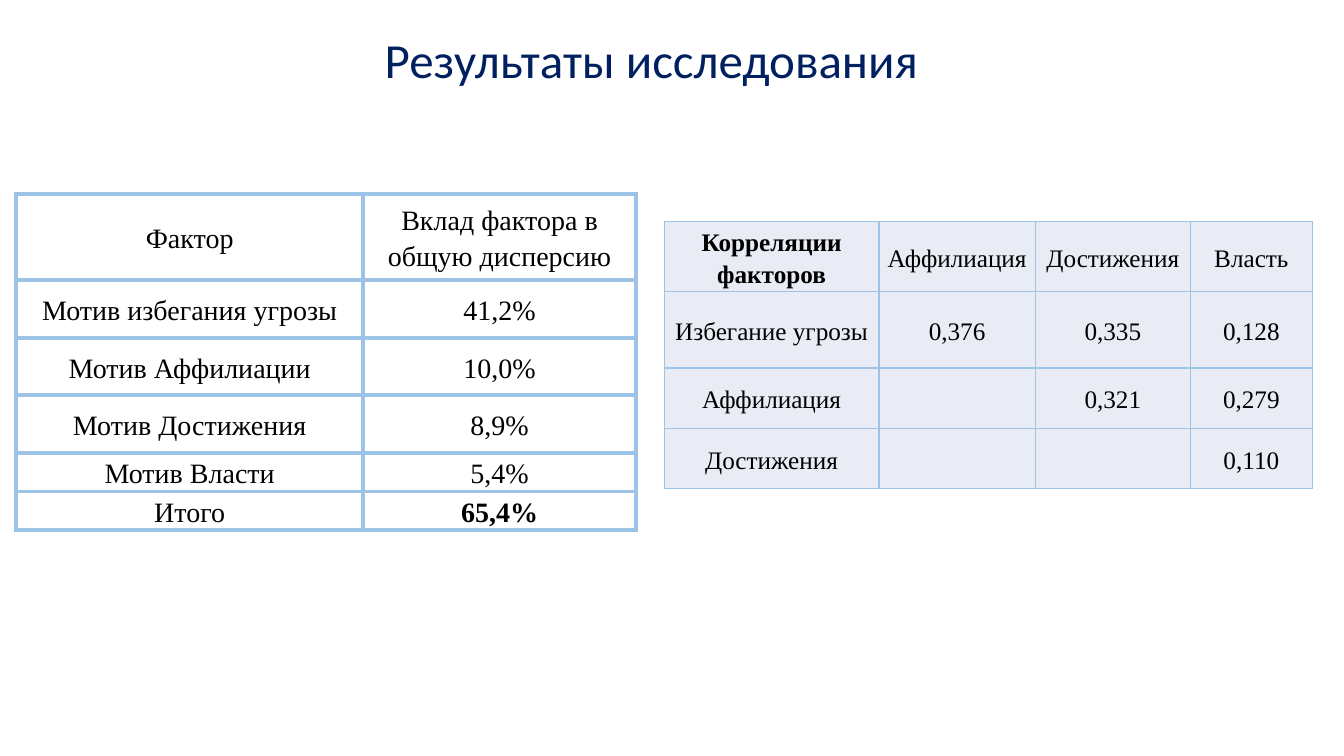
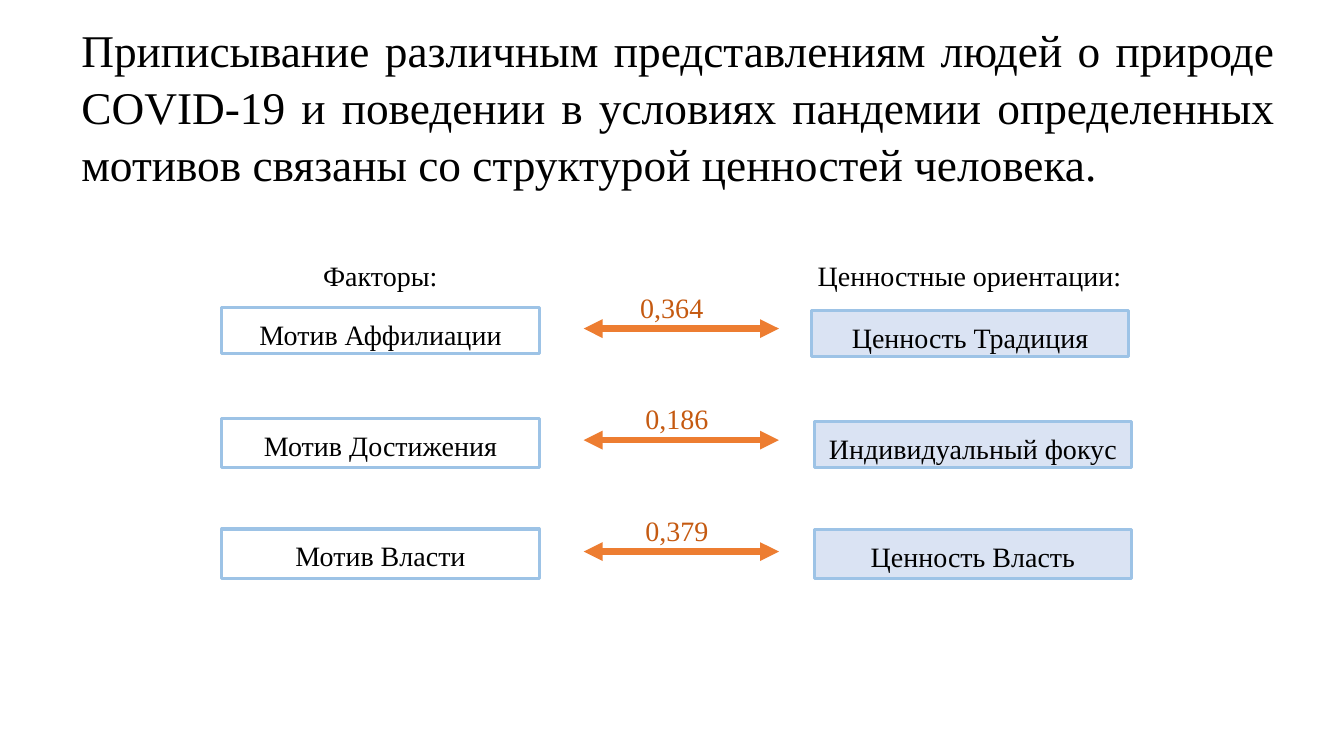
from lxml import etree
from pptx import Presentation
from pptx import util as u
from pptx.dml.color import RGBColor
from pptx.enum import shapes, text
from pptx.oxml import ns

SERIF, SANS = "Times New Roman", "Calibri"
BLACK, NAVY, RUST = "000000", "002060", "C55A11"
BORDER, ARROW = "9DC3E6", "ED7D31"
CELL_FILL, VALUE_FILL = "E9EBF5", "DAE3F3"


def rgb(value):
    return RGBColor.from_string(value)


class Deck:
    """Shared style plus the slide being built; lengths are centimetres."""

    def __init__(self):
        self.prs = Presentation()
        self.prs.slide_width, self.prs.slide_height = u.Cm(33.87), u.Cm(19.05)
        self.s = None

    def new_slide(self):
        self.s = self.prs.slides.add_slide(self.prs.slide_layouts[6])

    def add_text(self, tf, content, size=20, color=BLACK, font=SERIF, bold=False,
                 align=text.PP_ALIGN.CENTER, spacing=1.0, after=0):
        tf.word_wrap = True
        p = tf.paragraphs[0]
        p.alignment, p.line_spacing, p.space_after = align, spacing, u.Pt(after)
        r = p.add_run()
        r.text = content
        r.font.size, r.font.name, r.font.bold = u.Pt(size), font, bold
        r.font.color.rgb = rgb(color)

    def textbox(self, box, content, anchor=text.MSO_ANCHOR.TOP, **style):
        tf = self.s.shapes.add_textbox(*map(u.Cm, box)).text_frame
        tf.vertical_anchor = anchor
        self.add_text(tf, content, **style)

    def title(self, box, content, **style):
        self.textbox(box, content, text.MSO_ANCHOR.MIDDLE, **style)

    def box(self, box, content, fill=None, after=5):
        sp = self.s.shapes.add_shape(shapes.MSO_SHAPE.RECTANGLE, *map(u.Cm, box))
        sp.shadow.inherit = False
        self.paint(sp.fill, fill)
        sp.line.color.rgb, sp.line.width = rgb(BORDER), u.Pt(2.25)
        sp.text_frame.vertical_anchor = text.MSO_ANCHOR.TOP
        self.add_text(sp.text_frame, content, spacing=1.15, after=after)

    def double_arrow(self, left, right, y):
        arrow = self.s.shapes.add_connector(
            shapes.MSO_CONNECTOR.STRAIGHT, *map(u.Cm, (left, y, right, y)))
        arrow.line.color.rgb, arrow.line.width = rgb(ARROW), u.Pt(4.5)
        sp_pr = arrow._element.spPr
        ln = sp_pr.find(ns.qn("a:ln"))
        for end in ("a:headEnd", "a:tailEnd"):
            etree.SubElement(ln, ns.qn(end), type="triangle")
        etree.SubElement(sp_pr, ns.qn("a:effectLst"))

    def table(self, left, top, widths, heights, rows, border, fill=None,
              margin=0.13, bold_cells=(), **style):
        frame = self.s.shapes.add_table(
            len(rows), len(widths),
            *map(u.Cm, (left, top, sum(widths), sum(heights))))
        tbl = frame.table
        tbl.first_row = tbl.horz_banding = False
        for col, width in zip(tbl.columns, widths):
            col.width = u.Cm(width)
        for row, height in zip(tbl.rows, heights):
            row.height = u.Cm(height)
        for i, row in enumerate(rows):
            for j, content in enumerate(row):
                cell = tbl.cell(i, j)
                cell.margin_left = cell.margin_right = u.Cm(margin)
                cell.margin_top = cell.margin_bottom = 0
                cell.vertical_anchor = text.MSO_ANCHOR.MIDDLE
                self.cell_borders(cell, border)
                self.paint(cell.fill, fill)
                if content:
                    self.add_text(cell.text_frame, content, spacing=1.15,
                                  bold=(i, j) in bold_cells, **style)

    @staticmethod
    def paint(target, fill):
        if fill:
            target.solid()
            target.fore_color.rgb = rgb(fill)
        else:
            target.background()

    @staticmethod
    def cell_borders(cell, width):
        tc_pr = cell._tc.get_or_add_tcPr()
        for side in ("a:lnL", "a:lnR", "a:lnT", "a:lnB"):
            ln = etree.SubElement(tc_pr, ns.qn(side), w=str(int(u.Pt(width))))
            solid = etree.SubElement(ln, ns.qn("a:solidFill"))
            etree.SubElement(solid, ns.qn("a:srgbClr"), val=BORDER)


def results_slide(deck):
    deck.new_slide()
    deck.title((5.36, 0.2, 22.12, 2.77), "Результаты исследования",
               size=35, color=NAVY, font=SANS, spacing=0.9)

    # Share of variance by factor
    deck.table(0.41, 4.88, [8.74, 6.88], [2.18] + [1.45] * 3 + [0.97] * 2, [
        ("Фактор", "Вклад фактора в общую дисперсию"),
        ("Мотив избегания угрозы", "41,2%"),
        ("Мотив Аффилиации", "10,0%"),
        ("Мотив Достижения", "8,9%"),
        ("Мотив Власти", "5,4%"),
        ("Итого", "65,4%"),
    ], border=3, margin=0.15, bold_cells=[(5, 1)], after=5)

    # Correlations between factors
    deck.table(16.74, 5.59, [5.41, 3.94, 3.91, 3.07], [1.75, 1.93, 1.52, 1.52], [
        ("Корреляции факторов", "Аффилиация", "Достижения", "Власть"),
        ("Избегание угрозы", "0,376", "0,335", "0,128"),
        ("Аффилиация", "", "0,321", "0,279"),
        ("Достижения", "", "", "0,110"),
    ], border=1, fill=CELL_FILL, bold_cells=[(0, 0)], size=18, after=10)


def values_slide(deck):
    deck.new_slide()
    deck.title((1.8, 0.5, 30.58, 4.3),
               "Приписывание различным представлениям людей о природе COVID-19 "
               "и поведении в условиях пандемии определенных мотивов связаны "
               "со структурой ценностей человека.",
               size=32.4, align=text.PP_ALIGN.JUSTIFY, spacing=1.05)

    # Column headings
    deck.textbox((6.93, 6.38, 5.31, 1.12), "Факторы:")
    deck.textbox((19.43, 6.4, 10.01, 1.12), "Ценностные ориентации:")

    # Factor (name, height), correlation (r, left), value (name, left, top, height)
    links = [
        (("Мотив Аффилиации", 1.17), ("0,364", 15.57),
         ("Ценность Традиция", 20.45, 7.82, 1.17)),
        (("Мотив Достижения", 1.24), ("0,186", 15.7),
         ("Индивидуальный фокус", 20.52, 10.62, 1.17)),
        (("Мотив Власти", 1.24), ("0,379", 15.7),
         ("Ценность Власть", 20.52, 13.34, 1.24)),
    ]
    box_width, label_height = 8, 1.2
    for i, (factor, correlation, value) in enumerate(links):
        name, height = factor
        deck.box((5.59, 7.75 + 2.79 * i, box_width, height), name)

        arrow_y = 8.28 + 2.81 * i
        deck.double_arrow(14.71, 19.63, arrow_y)
        coefficient, left = correlation
        deck.textbox((left, arrow_y - 0.54 - label_height / 2, 2.72, label_height),
                     coefficient, text.MSO_ANCHOR.MIDDLE, color=RUST)

        name, left, top, height = value
        deck.box((left, top, box_width, height), name, VALUE_FILL, after=10)


def main():
    deck = Deck()
    results_slide(deck)
    values_slide(deck)
    deck.prs.save("out.pptx")


if __name__ == "__main__":
    main()
